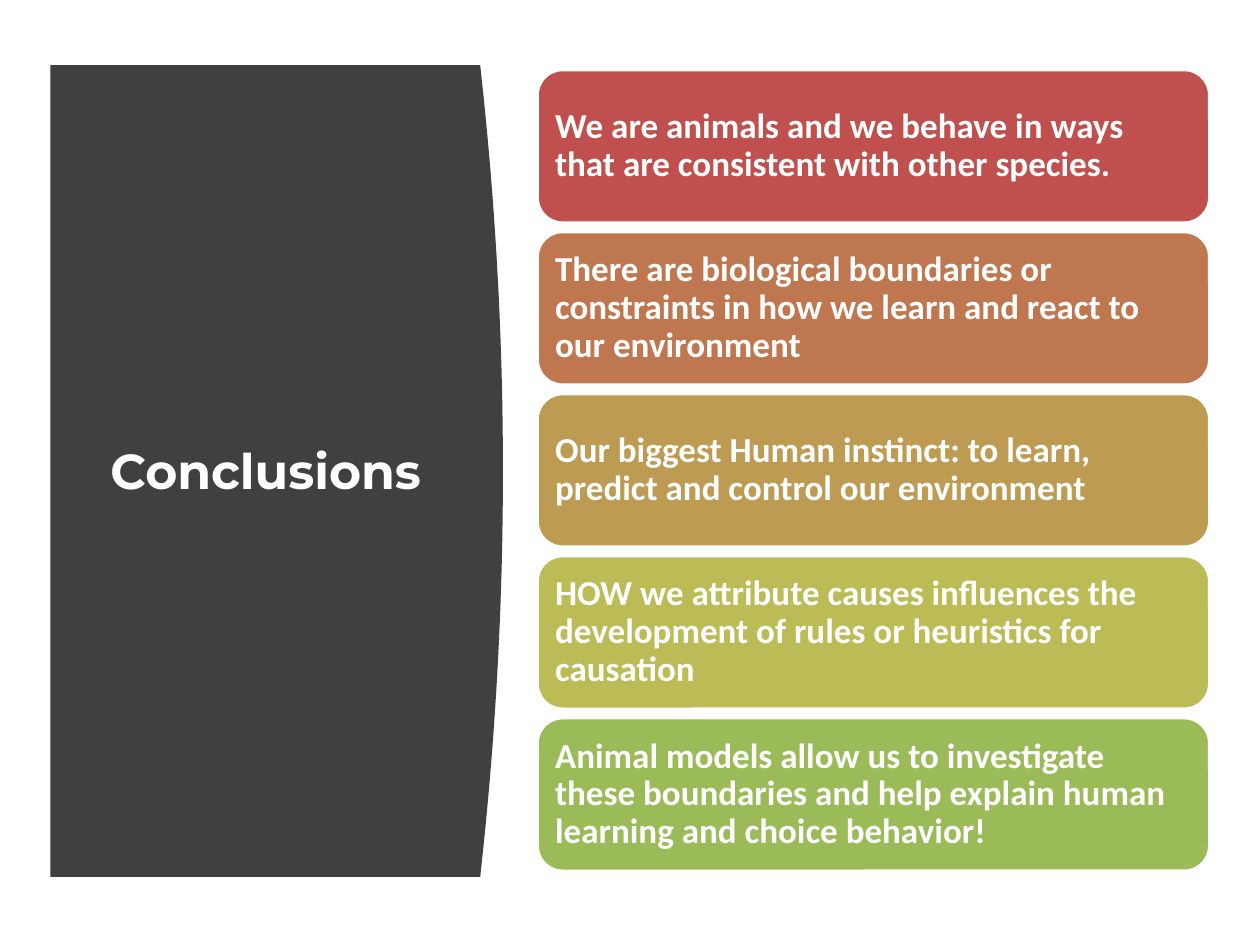
from dataclasses import dataclass

from pptx import Presentation
from pptx.dml.color import RGBColor as RGB
from pptx.enum.shapes import MSO_SHAPE as SHAPE
from pptx.enum.text import MSO_ANCHOR as ANCHOR, PP_ALIGN as ALIGN
from pptx.util import Pt


@dataclass(frozen=True)
class Theme:
    panel: str = "404040"
    white: str = "FFFFFF"
    cards: tuple = ("C0504D", "BF7750", "BD9B53", "BCBC56", "9BBB59")
    title_font: str = "Montserrat"
    body_font: str = "Calibri"
    title_size: int = 28
    body_size: int = 20


class Deck:
    def __init__(self, slide, theme):
        self.s = slide
        self.theme = theme

    def paint(self, sp, fill):
        sp.shadow.inherit = False
        sp.fill.solid()
        sp.fill.fore_color.rgb = RGB.from_string(fill)

    def set_text(self, sp, text, font, size, align):
        tf = sp.text_frame
        tf.word_wrap = True
        tf.vertical_anchor = ANCHOR.MIDDLE
        p = tf.paragraphs[0]
        p.text = text
        p.alignment = align
        p.font.name = font
        p.font.size = Pt(size)
        p.font.bold = True
        p.font.color.rgb = RGB.from_string(self.theme.white)
        return tf, p

    def curved_panel(self, left, top, width, height, bulge, steps=48):
        edge = []
        for i in range(steps + 1):
            t = i / steps
            x = left + width + bulge * (1 - (2 * t - 1) ** 2)
            edge.append((Pt(x), Pt(top + height * t)))
        fb = self.s.shapes.build_freeform(Pt(left), Pt(top))
        fb.add_line_segments(edge + [(Pt(left), Pt(top + height))])
        sp = fb.convert_to_shape()
        self.paint(sp, self.theme.panel)
        sp.line.fill.background()

    def title(self, text, left, top, width, height):
        sp = self.s.shapes.add_textbox(Pt(left), Pt(top), Pt(width), Pt(height))
        self.set_text(sp, text, self.theme.title_font, self.theme.title_size, ALIGN.CENTER)

    def card(self, text, fill, left, top, width, height):
        sp = self.s.shapes.add_shape(
            SHAPE.ROUNDED_RECTANGLE, Pt(left), Pt(top), Pt(width), Pt(height))
        self.paint(sp, fill)
        sp.line.color.rgb = RGB.from_string(self.theme.white)
        sp.line.width = Pt(2)
        tf, p = self.set_text(sp, text, self.theme.body_font, self.theme.body_size, ALIGN.LEFT)
        tf.margin_left = tf.margin_right = Pt(6)
        tf.margin_top = tf.margin_bottom = Pt(6)
        p.line_spacing = 0.9


CONCLUSIONS = (
    "We are animals and we behave in ways that are consistent with other species.",
    "There are biological boundaries or constraints in how we learn and react to our environment",
    "Our biggest Human instinct: to learn, predict and control our environment",
    "HOW we attribute causes influences the development of rules or heuristics for causation",
    "Animal models allow us to investigate these boundaries and help explain human "
    "learning and choice behavior!",
)
CARD_LEFT, CARD_TOP, CARD_WIDTH, CARD_HEIGHT = 306.9, 39.7, 384.4, 87.8
CARD_PITCH = 92.6


def main():
    prs = Presentation()
    prs.slide_width, prs.slide_height = Pt(720), Pt(540)
    theme = Theme()
    deck = Deck(prs.slides.add_slide(prs.slide_layouts[6]), theme)
    deck.curved_panel(28.8, 37.3, 245.6, 463.8, 13)
    deck.title("Conclusions", 51, 80, 201.6, 377.5)
    for i, (text, fill) in enumerate(zip(CONCLUSIONS, theme.cards)):
        deck.card(text, fill, CARD_LEFT, CARD_TOP + i * CARD_PITCH, CARD_WIDTH, CARD_HEIGHT)
    prs.save("out.pptx")


if __name__ == "__main__":
    main()
